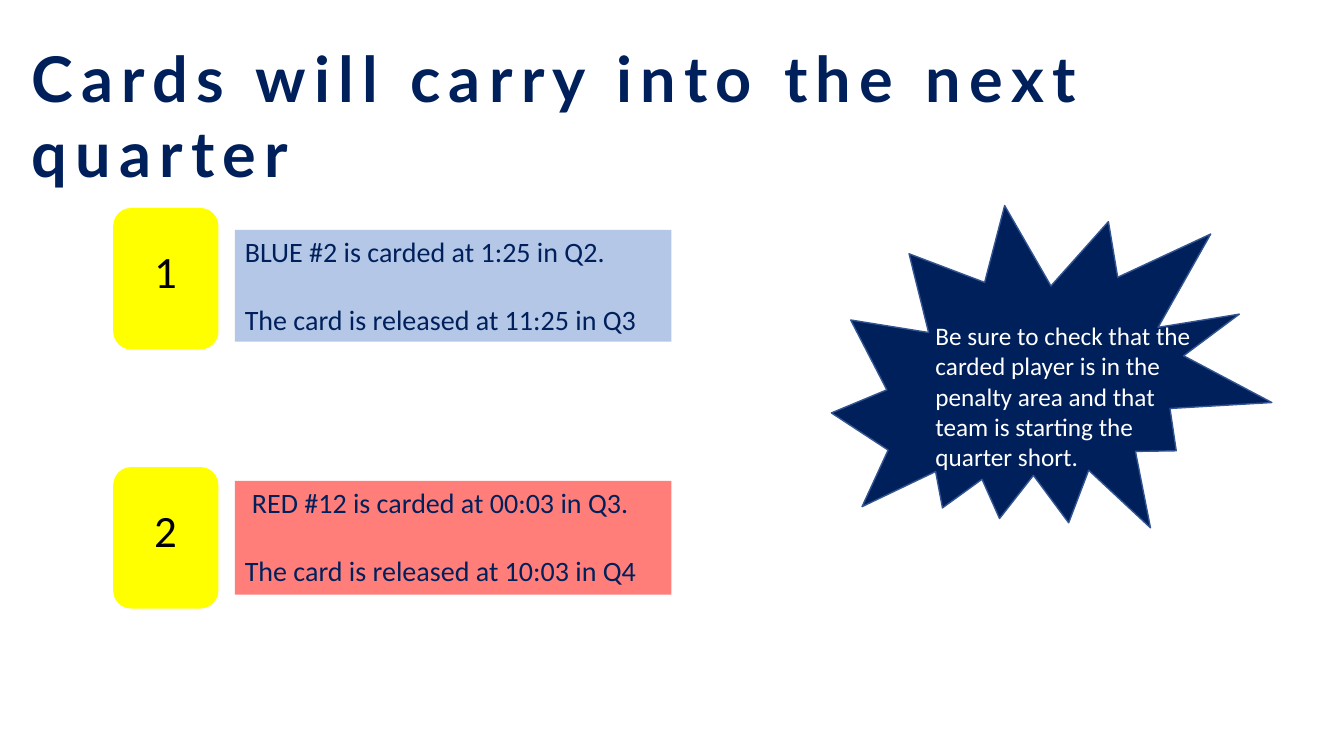
"""Slide on how cards carry into the next quarter."""
from pptx import Presentation
from pptx.dml.color import RGBColor
from pptx.enum.shapes import MSO_SHAPE as Preset
from pptx.enum.text import MSO_ANCHOR as Anchor, MSO_AUTO_SIZE as AutoSize, PP_ALIGN as Align
from pptx.util import Inches, Pt

NAVY, YELLOW, BLACK, WHITE = "00205B", "FFFF00", "000000", "FFFFFF"
CARD_LEFT, CARD_WIDTH, CARD_HEIGHT = 1.13, 1.03, 1.39
CASE_LEFT, CASE_WIDTH = 2.33, 4.33


def add_preset(preset, box, fill, line=None):
    shape = slide.shapes.add_shape(preset, *map(Inches, box))
    shape.shadow.inherit = False
    shape.fill.solid()
    shape.fill.fore_color.rgb = RGBColor.from_string(fill)
    if line:
        shape.line.color.rgb = RGBColor.from_string(line)
        shape.line.width = Pt(1)
    else:
        shape.line.fill.background()
    return shape


def write(shape, lines, size, color, font="Calibri", gap=0):
    frame = shape.text_frame
    frame.word_wrap = True
    frame.auto_size = AutoSize.NONE
    frame.vertical_anchor = Anchor.TOP
    for index, line in enumerate(lines):
        paragraph = frame.add_paragraph() if index else frame.paragraphs[0]
        paragraph.alignment = Align.LEFT
        if index:
            paragraph.space_before = Pt(gap)
        run = paragraph.add_run()
        run.text = line
        run.font.size = Pt(size)
        run.font.name = font
        run.font.color.rgb = RGBColor.from_string(color)
    return frame.paragraphs[0]


deck = Presentation()
deck.slide_width, deck.slide_height = Inches(13.33), Inches(7.5)
slide = deck.slides.add_slide(deck.slide_layouts[5])

title = slide.shapes.title
title.left, title.top, title.width, title.height = map(Inches, (0.21, 0.34, 10.81, 0.86))
heading = write(title, ["Cards will carry into the next quarter"], 45, NAVY, "Lato").runs[0]
heading.font.bold = True
heading.font._element.set("spc", "600")

cases = [
    ("1", 2.07, 2.28, 1.11, "B4C7E7", 0,
     ["BLUE #2 is carded at 1:25 in Q2.", "The card is released at 11:25 in Q3"]),
    ("2", 4.64, 4.77, 1.13, "FF7E79", 0.07,
     ["RED #12 is carded at 00:03 in Q3.", "The card is released at 10:03 in Q4"]),
]
for number, card_top, case_top, case_height, team_color, indent, lines in cases:
    add_preset(Preset.ROUNDED_RECTANGLE, (CARD_LEFT, card_top, CARD_WIDTH, CARD_HEIGHT),
               YELLOW, YELLOW)
    case = add_preset(Preset.RECTANGLE, (CASE_LEFT, case_top, CASE_WIDTH, case_height), team_color)
    opening = write(case, lines, 20, NAVY, gap=24.4)
    opening._p.get_or_add_pPr().set("indent", str(Inches(indent)))
    digit = slide.shapes.add_textbox(*map(Inches, (1.43, card_top + 0.3, 0.42, 0.64)))
    write(digit, [number], 32, BLACK)

burst = add_preset(Preset.EXPLOSION2, (8.39, 1.77, 4.1, 3.97), NAVY, "325491")
burst.rotation = 26.7
reminder = slide.shapes.add_textbox(*map(Inches, (9.18, 3.13, 2.88, 2.22)))
write(reminder, ["Be sure to check that the carded player is in the penalty area "
                 "and that team is starting the quarter short."], 18, WHITE)

deck.save("out.pptx")
